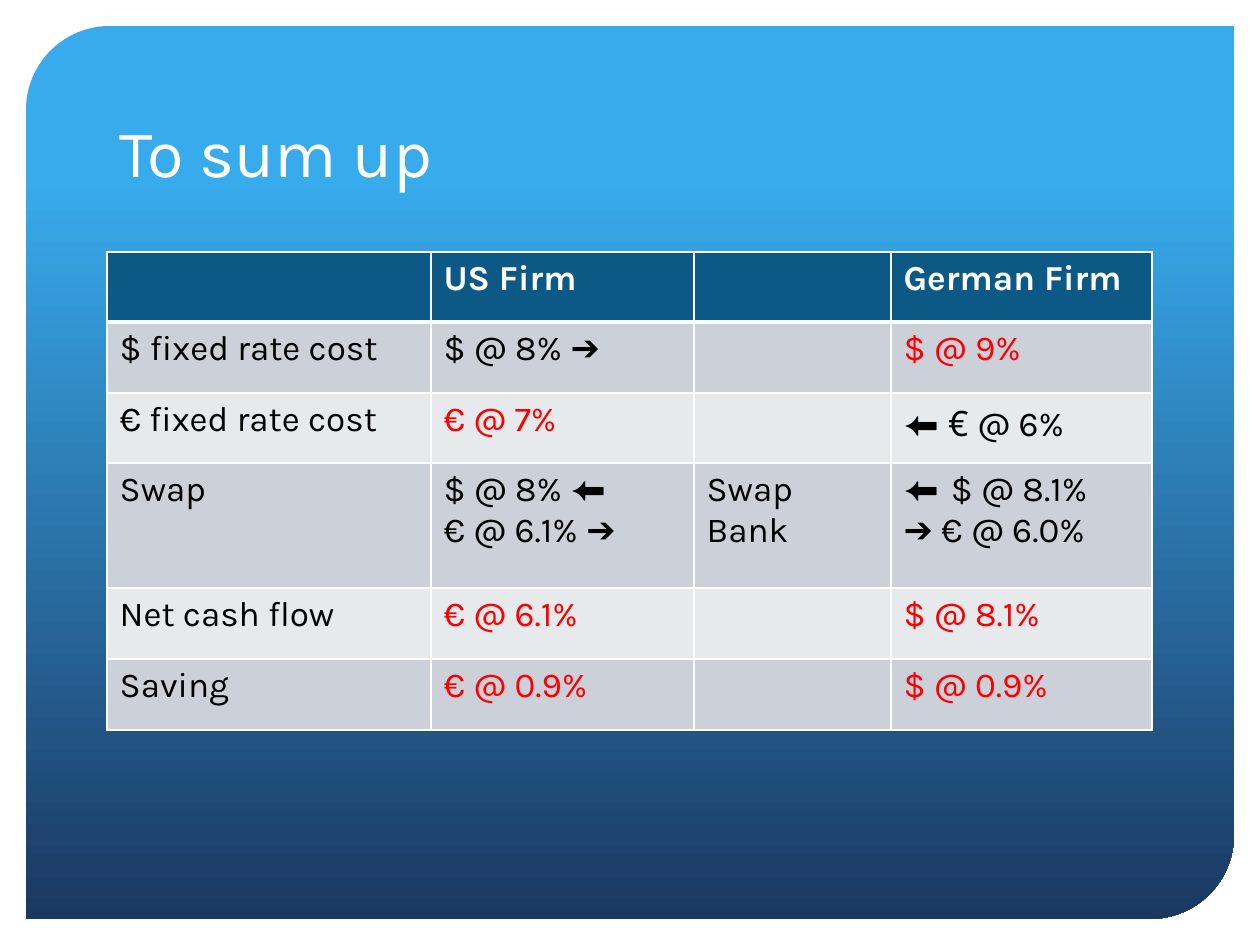
from lxml.etree import SubElement
from pptx import Presentation
from pptx.dml.color import RGBColor
from pptx.enum.shapes import MSO_SHAPE
from pptx.enum.text import MSO_ANCHOR, MSO_AUTO_SIZE, PP_ALIGN
from pptx.oxml import parse_xml
from pptx.oxml.ns import nsdecls, qn
from pptx.util import Emu, Pt

COLORS = {
    "white": "FFFFFF",
    "black": "000000",
    "red": "FF0000",
    "sky": "38ABED",
    "navy": "1B3861",
    "header": "0C5986",
    "odd": "CCD1D9",
    "even": "E7EAED",
}
FONT = "Karla"
ARROW_FONT = "Arial"
EURO_FONT = "Noto Sans"
RIGHT = ("➔", ARROW_FONT)
LEFT = ("⬅", ARROW_FONT)

COLS = [324, 263, 197, 261]
ROWS = [70, 71, 70, 125, 71, 71]
HEADER = ["", "US Firm", "", "German Firm"]
BODY = [
    ["$ fixed rate cost", [["$ @ 8% ", RIGHT]], "", "$ @ 9%"],
    ["€ fixed rate cost", "€ @ 7%", "", [[("⬅ ", ARROW_FONT), ("€ ", EURO_FONT), "@ 6%"]]],
    ["Swap", [["$ @ 8% ", LEFT], ["€ @ 6.1% ", RIGHT]], "Swap Bank",
     [[" $ @ 8.1%"], [RIGHT, " € @ 6.0%"]]],
    ["Net cash flow", "€ @ 6.1%", "", "$ @ 8.1%"],
    ["Saving", "€ @ 0.9%", "", "$ @ 0.9%"],
]
RED_CELLS = {(1, 3), (2, 1), (4, 1), (4, 3), (5, 1), (5, 3)}
BULLET_CELL = (3, 3)


def px(n):
    return Emu(round(n * 914400 / 126))


def rgb(name):
    return RGBColor.from_string(COLORS[name])


class Deck:
    def __init__(self, width, height):
        self.prs = Presentation()
        self.prs.slide_width, self.prs.slide_height = px(width), px(height)
        self.s = self.prs.slides.add_slide(self.prs.slide_layouts[5])

    def run(self, p, text, size, color, font=FONT, bold=False):
        r = p.add_run()
        r.text = text
        r.font.name, r.font.size, r.font.bold = font, Pt(size), bold
        r.font.color.rgb = rgb(color)

    def panel(self, x, y, w, h):
        sp = self.s.shapes.add_shape(MSO_SHAPE.ROUND_2_DIAG_RECTANGLE, px(x), px(y), px(w), px(h))
        sp.adjustments[0], sp.adjustments[1] = 0.094, 0
        sp.shadow.inherit = False
        sp.line.fill.background()
        sp.fill.gradient()
        sp.fill.gradient_angle = 270
        for stop, pos, color in zip(sp.fill.gradient_stops, (0.17, 1), ("sky", "navy")):
            stop.position = pos
            stop.color.rgb = rgb(color)
        self.s.shapes.title.element.addprevious(sp.element)

    def title(self, text, x, y, w, h):
        sp = self.s.shapes.title
        sp.left, sp.top, sp.width, sp.height = px(x), px(y), px(w), px(h)
        tf = sp.text_frame
        tf.auto_size = MSO_AUTO_SIZE.NONE
        tf.word_wrap = True
        tf.vertical_anchor = MSO_ANCHOR.BOTTOM
        p = tf.paragraphs[0]
        p.alignment = PP_ALIGN.LEFT
        self.run(p, text, 38, "white")

    def borders(self, cell, top, bottom):
        tc_pr = cell._tc.get_or_add_tcPr()
        for i, (side, width) in enumerate(zip("LRTB", (1, 1, top, bottom))):
            tc_pr.insert(i, parse_xml(
                f'<a:ln{side} {nsdecls("a")} w="{Pt(width)}"><a:solidFill>'
                f'<a:srgbClr val="{COLORS["white"]}"/></a:solidFill></a:ln{side}>'))

    def bullet(self, p, char, indent):
        p_pr = p._p.get_or_add_pPr()
        p_pr.set("marL", str(px(indent)))
        p_pr.set("indent", str(-px(indent)))
        SubElement(p_pr, qn("a:buFont")).set("typeface", ARROW_FONT)
        SubElement(p_pr, qn("a:buChar")).set("char", char)

    def cell(self, cell, content, fill, color, bold, bulleted):
        cell.fill.solid()
        cell.fill.fore_color.rgb = rgb(fill)
        lines = [[content]] if isinstance(content, str) else content
        tf = cell.text_frame
        for i, line in enumerate(lines):
            p = tf.add_paragraph() if i else tf.paragraphs[0]
            if bulleted and i == 0:
                self.bullet(p, "⬅", 39)
            for part in line:
                text, font = (part, FONT) if isinstance(part, str) else part
                if text:
                    self.run(p, text, 20, color, font, bold)

    def table(self, rows, x, y):
        table = self.s.shapes.add_table(
            len(ROWS), len(COLS), px(x), px(y), px(sum(COLS)), px(sum(ROWS))).table
        table.horz_banding = False
        for col, width in zip(table.columns, COLS):
            col.width = px(width)
        for row, height in zip(table.rows, ROWS):
            row.height = px(height)
        for r, row in enumerate(rows):
            fill = "header" if r == 0 else "odd" if r % 2 else "even"
            for c, content in enumerate(row):
                color = "white" if r == 0 else "red" if (r, c) in RED_CELLS else "black"
                cell = table.cell(r, c)
                self.cell(cell, content, fill, color, r == 0, (r, c) == BULLET_CELL)
                self.borders(cell, 3 if r == 1 else 1, 3 if r == 0 else 1)


def main():
    deck = Deck(1260, 945)
    deck.panel(26, 26, 1208, 893)
    deck.title("To sum up", 107, 53, 1045, 144)
    deck.table([HEADER] + BODY, 107, 252)
    deck.prs.save("out.pptx")


if __name__ == "__main__":
    main()
